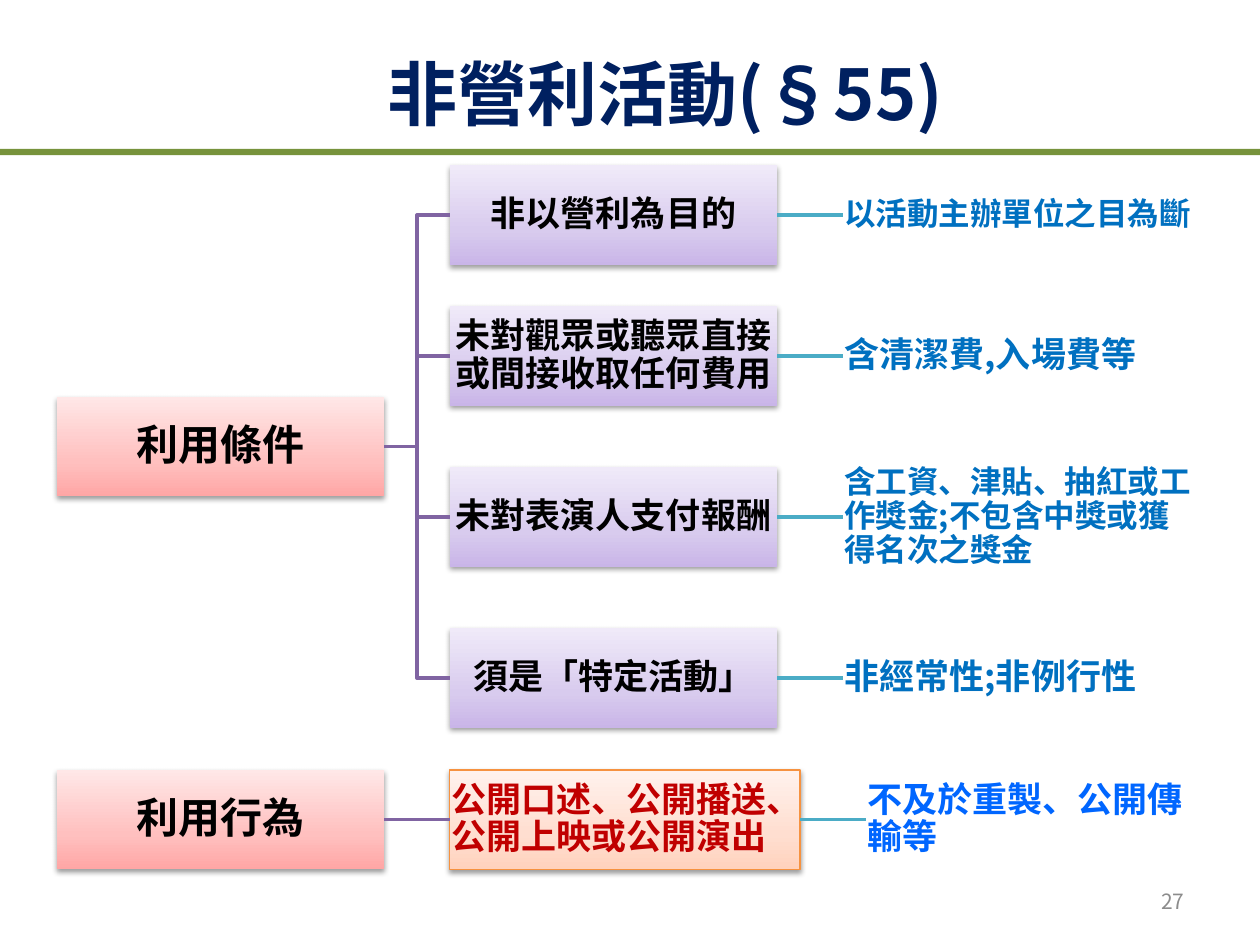
from lxml import etree
from pptx import Presentation
from pptx.dml.color import RGBColor
from pptx.enum.shapes import MSO_CONNECTOR, MSO_SHAPE
from pptx.enum.text import MSO_ANCHOR, PP_ALIGN
from pptx.oxml import parse_xml
from pptx.oxml.ns import nsdecls, qn
from pptx.util import Pt

LEFT, CENTER, RIGHT = PP_ALIGN.LEFT, PP_ALIGN.CENTER, PP_ALIGN.RIGHT
MIDDLE = MSO_ANCHOR.MIDDLE
STRAIGHT, ELBOW = MSO_CONNECTOR.STRAIGHT, MSO_CONNECTOR.ELBOW
RECT = MSO_SHAPE.RECTANGLE
SIDE_LEFT, SIDE_RIGHT = 1, 3

FONT = "Noto Sans CJK SC"
BLACK = RGBColor(0x00, 0x00, 0x00)
NAVY = RGBColor(0x00, 0x20, 0x60)
GREEN = RGBColor(0x77, 0x93, 0x3C)
GRAY = RGBColor(0x8C, 0x8C, 0x8C)
BLUE = RGBColor(0x00, 0x70, 0xC0)
BRIGHT_BLUE = RGBColor(0x00, 0x66, 0xFF)
RED = RGBColor(0xC0, 0x00, 0x00)
ORANGE = RGBColor(0xF6, 0x92, 0x40)
PURPLE = RGBColor(0x80, 0x64, 0xA2)
TEAL = RGBColor(0x4B, 0xAC, 0xC6)
PINK_STOPS = (RGBColor(0xFF, 0xA6, 0xA5), RGBColor(0xFF, 0xC0, 0xBF), RGBColor(0xFF, 0xE7, 0xE7))
LILAC_STOPS = (RGBColor(0xC9, 0xB5, 0xE8), RGBColor(0xD8, 0xCB, 0xEE), RGBColor(0xF0, 0xEA, 0xF9))
PEACH_STOPS = (RGBColor(0xFF, 0xD2, 0xBD), RGBColor(0xFF, 0xDE, 0xD0), RGBColor(0xFF, 0xF2, 0xED))

BOX_W, BOX_H = 187.2, 56.9
ROOT_X, BRANCH_X = 32.4, 257
GAP = 37.5
CONDITION_Y, ACTION_Y = 255.2, 468.4

CONDITIONS = [
    (123, "非以營利為目的", "以活動主辦單位之目為斷", 18, BOX_H),
    (203.4, "未對觀眾或聽眾直接或間接收取任何費用", "含清潔費,入場費等", 20, BOX_H),
    (295.5, "未對表演人支付報酬", "含工資、津貼、抽紅或工作獎金;不包含中獎或獲得名次之獎金", 18, 80),
    (387.5, "須是「特定活動」", "非經常性;非例行性", 20, BOX_H),
]


def write(sp, text, size=20, color=BLACK, bold=True, align=LEFT, inset=0.8, spacing=0.9):
    tf = sp.text_frame
    tf.word_wrap = True
    tf.vertical_anchor = MIDDLE
    tf.margin_left = tf.margin_right = tf.margin_top = tf.margin_bottom = Pt(inset)
    p = tf.paragraphs[0]
    p.alignment = align
    p.line_spacing = spacing
    r = p.add_run()
    r.text = text
    r.font.size = Pt(size)
    r.font.bold = bold
    r.font.name = FONT
    r.font.color.rgb = color
    etree.SubElement(r.font._element, qn("a:ea")).set("typeface", FONT)


class Deck:
    def __init__(self):
        self.prs = Presentation()
        self.prs.slide_width, self.prs.slide_height = Pt(720), Pt(540)
        self.s = self.prs.slides.add_slide(self.prs.slide_layouts[5])

    def title(self, text, x, y, w, h):
        sp = self.s.shapes.title
        sp.left, sp.top, sp.width, sp.height = Pt(x), Pt(y), Pt(w), Pt(h)
        write(sp, text, size=40, color=NAVY, align=CENTER, inset=3.6, spacing=1)

    def band(self, y, h, color):
        sp = self.s.shapes.add_shape(RECT, 0, Pt(y), self.prs.slide_width, Pt(h))
        sp.shadow.inherit = False
        sp.fill.solid()
        sp.fill.fore_color.rgb = color
        sp.line.fill.background()

    def box(self, text, x, mid, stops, w=BOX_W, line=None, **style):
        sp = self.s.shapes.add_shape(RECT, Pt(x), Pt(mid - BOX_H / 2), Pt(w), Pt(BOX_H))
        gs = "".join(
            f'<a:gs pos="{pos}"><a:srgbClr val="{color}"/></a:gs>'
            for pos, color in zip((0, 35000, 100000), stops))
        sp._element.spPr.append(parse_xml(
            f'<a:gradFill {nsdecls("a")} rotWithShape="1"><a:gsLst>{gs}</a:gsLst>'
            '<a:lin ang="16200000" scaled="0"/></a:gradFill>'))
        if line is None:
            sp.line.fill.background()
        else:
            sp.line.color.rgb = line
            sp.line.width = Pt(0.75)
        sp._element.spPr.append(parse_xml(
            f'<a:effectLst {nsdecls("a")}><a:outerShdw blurRad="{Pt(3.1)}" dist="{Pt(1.6)}" '
            'dir="5400000" rotWithShape="0"><a:srgbClr val="000000"><a:alpha val="38000"/>'
            '</a:srgbClr></a:outerShdw></a:effectLst>'))
        write(sp, text, **style)
        return sp

    def text(self, text, x, mid, w, h, **style):
        sp = self.s.shapes.add_textbox(Pt(x), Pt(mid - h / 2), Pt(w), Pt(h))
        write(sp, text, **style)
        return sp

    def link(self, start, end, color, kind=STRAIGHT):
        c = self.s.shapes.add_connector(kind, 0, 0, 0, 0)
        c.begin_connect(start, SIDE_RIGHT)
        c.end_connect(end, SIDE_LEFT)
        c.line.color.rgb = color
        c.line.width = Pt(2)
        etree.SubElement(c._element.spPr, qn("a:effectLst"))


def main():
    deck = Deck()
    deck.band(85, 3.6, GREEN)
    deck.title("非營利活動(§55)", 150.5, 26, 459.4, 53.3)

    root = deck.box("利用條件", ROOT_X, CONDITION_Y, PINK_STOPS, size=24, align=CENTER, inset=1.2)
    for mid, condition, remark, size, h in CONDITIONS:
        branch = deck.box(condition, BRANCH_X, mid, LILAC_STOPS, align=CENTER)
        note = deck.text(remark, BRANCH_X + BOX_W + GAP, mid, 201.6, h, size=size, color=BLUE)
        deck.link(root, branch, PURPLE, ELBOW)
        deck.link(branch, note, TEAL)

    root = deck.box("利用行為", ROOT_X, ACTION_Y, PINK_STOPS, size=24, align=CENTER, inset=1.2)
    action_w = 200.2
    action = deck.box("公開口述、公開播送、公開上映或公開演出", BRANCH_X, ACTION_Y, PEACH_STOPS,
                      w=action_w, line=ORANGE, color=RED)
    note = deck.text("不及於重製、公開傳輸等", BRANCH_X + action_w + GAP, ACTION_Y, BOX_W, BOX_H,
                     color=BRIGHT_BLUE)
    deck.link(root, action, PURPLE)
    deck.link(action, note, TEAL)

    deck.text("27", 516, 514.8, 168, 28.8, size=12, color=GRAY, bold=False, align=RIGHT,
              inset=7.2, spacing=1)
    deck.prs.save("out.pptx")


if __name__ == "__main__":
    main()
